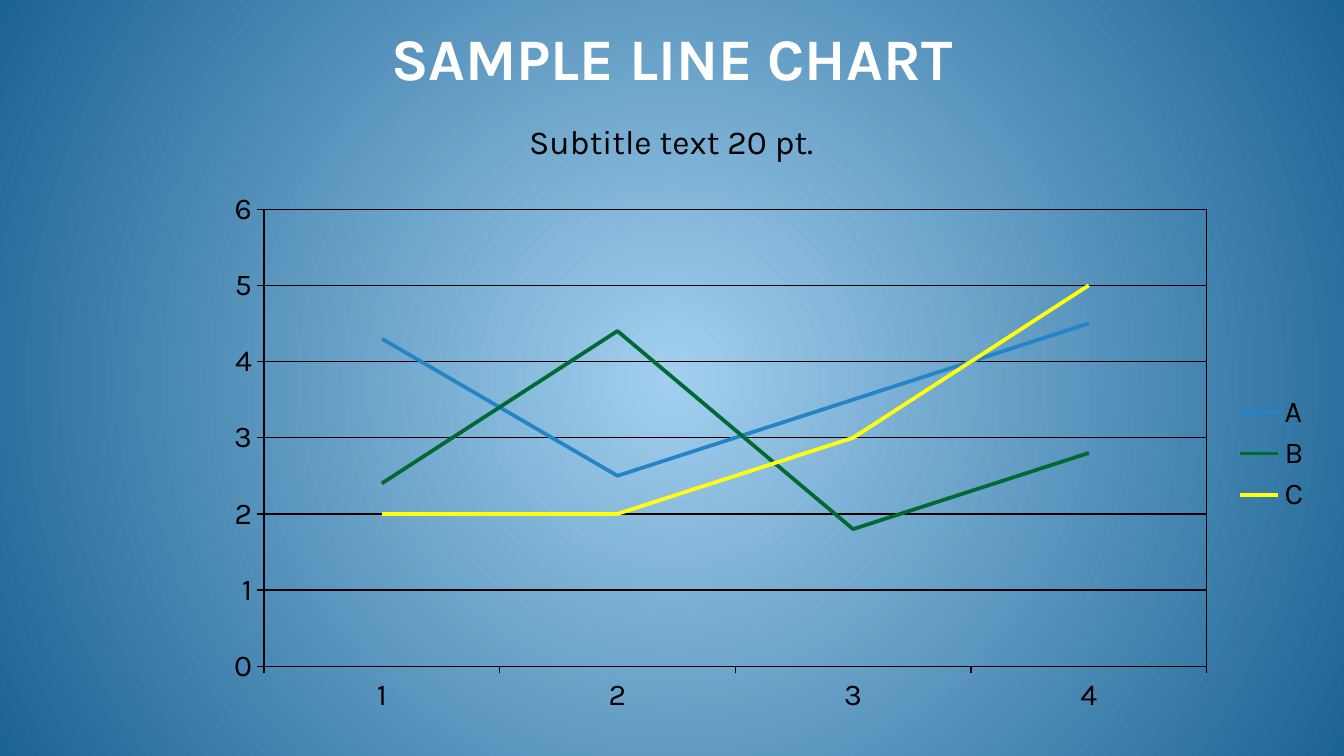
from lxml.etree import SubElement
from pptx import Presentation
from pptx.chart.data import CategoryChartData
from pptx.dml.color import RGBColor
from pptx.enum.chart import XL_CHART_TYPE as ChartType, XL_LEGEND_POSITION as LegendPosition
from pptx.enum.chart import XL_TICK_MARK as TickMark
from pptx.enum.text import MSO_ANCHOR as Anchor, PP_ALIGN as Align
from pptx.oxml import parse_xml
from pptx.oxml.ns import nsdecls, qn
from pptx.util import Inches, Pt

FONT = "Karla"
BLACK, WHITE = "000000", "FFFFFF"
CATEGORIES = ["1", "2", "3", "4"]
SERIES = [
    ("A", "2484C6", (4.3, 2.5, 3.5, 4.5)),
    ("B", "006934", (2.4, 4.4, 1.8, 2.8)),
    ("C", "FFFF11", (2, 2, 3, 5)),
]


def color(value):
    return RGBColor.from_string(value)


def style_font(font, size, tint, bold=False):
    font.name, font.size, font.bold = FONT, Pt(size), bold
    font.color.rgb = color(tint)


def style_line(line, tint, width):
    line.color.rgb = color(tint)
    line.width = Pt(width)


def add_text(page, text, box, size, tint=BLACK, bold=False, anchor=Anchor.TOP):
    frame = page.shapes.add_textbox(*map(Inches, box)).text_frame
    frame.word_wrap = True
    frame.vertical_anchor = anchor
    frame.margin_left = frame.margin_right = Inches(0.05)
    frame.margin_top = frame.margin_bottom = Inches(0.05)
    para = frame.paragraphs[0]
    para.alignment, para.line_spacing = Align.CENTER, 0.9
    span = para.add_run()
    span.text = text
    style_font(span.font, size, tint, bold)


def paint_background(page, center, edge):
    fill = page.background.fill
    fill.gradient()
    gradient = page.element.find(".//" + qn("a:gradFill"))
    radial = parse_xml(
        f'<a:gradFill {nsdecls("a")} rotWithShape="1"><a:gsLst>'
        f'<a:gs pos="0"><a:srgbClr val="{center}"/></a:gs>'
        f'<a:gs pos="100000"><a:srgbClr val="{edge}"/></a:gs></a:gsLst>'
        '<a:path path="circle"><a:fillToRect l="50000" t="50000" r="50000" b="50000"/>'
        '</a:path></a:gradFill>')
    gradient.getparent().replace(gradient, radial)


def frame_plot(chart, **fractions):
    """Place the inner plot area by fractions of the chart and outline it."""
    area = chart.element.find(".//" + qn("c:plotArea"))
    layout = area.find(qn("c:layout"))
    if layout is None:
        layout = parse_xml(f'<c:layout {nsdecls("c")}/>')
        area.insert(0, layout)
    manual = SubElement(layout, qn("c:manualLayout"))
    settings = {"layoutTarget": "inner", "xMode": "edge", "yMode": "edge", **fractions}
    for name, value in settings.items():
        SubElement(manual, qn("c:" + name)).set("val", str(value))
    area.append(parse_xml(
        f'<c:spPr {nsdecls("c", "a")}><a:noFill/><a:ln w="{Pt(0.75)}"><a:solidFill>'
        f'<a:srgbClr val="{BLACK}"/></a:solidFill></a:ln></c:spPr>'))


def add_line_chart(page, box):
    data = CategoryChartData()
    data.categories = CATEGORIES
    for name, _, values in SERIES:
        data.add_series(name, values)
    chart = page.shapes.add_chart(ChartType.LINE, *map(Inches, box), data).chart
    chart.has_title = False
    style_font(chart.font, 18, BLACK)
    chart.plots[0].vary_by_categories = False

    # Series lines
    for series, (_, tint, _) in zip(chart.plots[0].series, SERIES):
        series.smooth = False
        style_line(series.format.line, tint, 2.25)

    # Axes and gridlines
    for axis in (chart.category_axis, chart.value_axis):
        axis.major_tick_mark, axis.minor_tick_mark = TickMark.OUTSIDE, TickMark.NONE
        style_font(axis.tick_labels.font, 18, BLACK)
        style_line(axis.format.line, BLACK, 0.75)
    values_axis = chart.value_axis
    values_axis.minimum_scale, values_axis.maximum_scale, values_axis.major_unit = 0, 6, 1
    values_axis.has_major_gridlines = True
    style_line(values_axis.major_gridlines.format.line, BLACK, 0.75)

    # Legend
    chart.has_legend = True
    chart.legend.position = LegendPosition.RIGHT
    chart.legend.include_in_layout = False
    style_font(chart.legend.font, 18, BLACK)
    frame_plot(chart, x=0.047, y=0.051, w=0.848, h=0.84)


def build_chart_slide(deck):
    page = deck.slides.add_slide(deck.slide_layouts[6])
    paint_background(page, "A2CFEE", "1B6394")
    add_text(page, "SAMPLE LINE CHART", (0, 0.21, 11.11, 0.59), 35, WHITE,
             bold=True, anchor=Anchor.MIDDLE)
    add_text(page, "Subtitle text 20 pt.", (0.3, 0.99, 10.5, 4.81), 20)
    add_line_chart(page, (1.75, 1.5, 9.19, 4.5))


def main():
    deck = Presentation()
    deck.slide_width, deck.slide_height = Inches(11.11), Inches(6.25)
    build_chart_slide(deck)
    deck.save("out.pptx")


if __name__ == "__main__":
    main()
